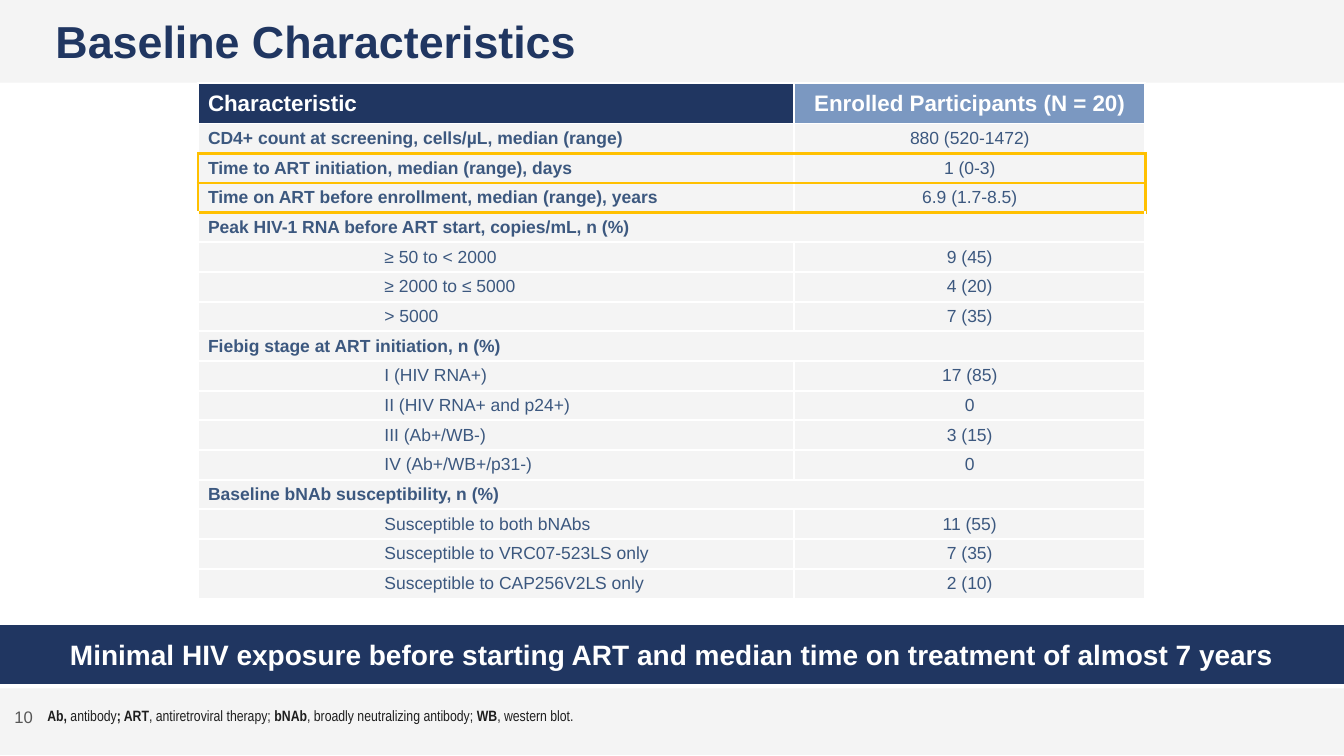
from lxml.etree import SubElement
from pptx import Presentation
from pptx.dml.color import RGBColor
from pptx.enum.shapes import MSO_SHAPE as Preset
from pptx.enum.text import MSO_ANCHOR as Anchor, MSO_AUTO_SIZE as AutoSize, PP_ALIGN as Align
from pptx.oxml.ns import qn
from pptx.util import Pt

COLORS = {
    "navy": "203661", "steel": "7B98C1", "slate": "3C587F", "light": "F4F4F4",
    "white": "FFFFFF", "gold": "FFC000", "ink": "1E1E1E", "gray": "565656",
}
ROWS = [
    ("CD4+ count at screening, cells/µL, median (range)", "880 (520-1472)", "main"),
    ("Time to ART initiation, median (range), days", "1 (0-3)", "key"),
    ("Time on ART before enrollment, median (range), years", "6.9 (1.7-8.5)", "key"),
    ("Peak HIV-1 RNA before ART start, copies/mL, n (%)", "", "group"),
    ("≥ 50 to < 2000", "9 (45)", "detail"),
    ("≥ 2000 to ≤ 5000", "4 (20)", "detail"),
    ("> 5000", "7 (35)", "detail"),
    ("Fiebig stage at ART initiation, n (%)", "", "group"),
    ("I (HIV RNA+)", "17 (85)", "detail"),
    ("II (HIV RNA+ and p24+)", "0", "detail"),
    ("III (Ab+/WB-)", "3 (15)", "detail"),
    ("IV (Ab+/WB+/p31-)", "0", "detail"),
    ("Baseline bNAb susceptibility, n (%)", "", "group"),
    ("Susceptible to both bNAbs", "11 (55)", "detail"),
    ("Susceptible to VRC07-523LS only", "7 (35)", "detail"),
    ("Susceptible to CAP256V2LS only", "2 (10)", "detail"),
]
ABBREVIATIONS = [
    ("Ab, ", True), ("antibody", False), ("; ART", True),
    (", antiretroviral therapy; ", False), ("bNAb", True),
    (", broadly neutralizing antibody; ", False), ("WB", True),
    (", western blot.", False),
]


def color(name):
    return RGBColor.from_string(COLORS[name])


class SlideBuilder:
    """Holds the style and the current slide, and adds each kind of element."""

    def __init__(self, slide, font="Arial"):
        self.slide = slide
        self.font = font

    def add_runs(self, paragraph, runs, size, ink, align=Align.LEFT, font=None):
        paragraph.alignment = align
        for text, bold in runs:
            run = paragraph.add_run()
            run.text = text
            run.font.name = font or self.font
            run.font.size = Pt(size)
            run.font.bold = bold
            run.font.color.rgb = color(ink)

    def frame(self, shape, margins):
        frame = shape.text_frame
        frame.word_wrap = True
        frame.auto_size = AutoSize.NONE
        frame.vertical_anchor = Anchor.MIDDLE
        side, edge = margins
        frame.margin_left = frame.margin_right = Pt(side)
        frame.margin_top = frame.margin_bottom = Pt(edge)
        return frame.paragraphs[0]

    def title(self, text, box):
        title = self.slide.shapes.title
        title.left, title.top, title.width, title.height = map(Pt, box)
        title.fill.solid()
        title.fill.fore_color.rgb = color("light")
        paragraph = self.frame(title, (7.2, 0))
        paragraph._p.get_or_add_pPr().set("marL", str(Pt(32.4)))
        self.add_runs(paragraph, [(text, True)], 32, "navy")

    def band(self, box, fill, text=None, line=None):
        band = self.slide.shapes.add_shape(Preset.RECTANGLE, *map(Pt, box))
        band.shadow.inherit = False
        band.fill.solid()
        band.fill.fore_color.rgb = color(fill)
        if line:
            band.line.color.rgb = color(fill)
            band.line.width = Pt(line)
        else:
            band.line.fill.background()
        if text:
            paragraph = self.frame(band, (7.2, 3.6))
            self.add_runs(paragraph, [(text, True)], 20, "white", Align.CENTER)

    def text(self, box, runs, size, ink, align=Align.LEFT, font=None, spacing=1.0):
        paragraph = self.frame(self.slide.shapes.add_textbox(*map(Pt, box)), (0, 0))
        paragraph.line_spacing = spacing
        self.add_runs(paragraph, runs, size, ink, align, font)

    def cell(self, cell, text, fill, size, ink, bold, align, gold_edges="", indent=0):
        properties = cell._tc.get_or_add_tcPr()
        for edge in "LRTB":
            is_gold = edge in gold_edges
            line = SubElement(properties, qn(f"a:ln{edge}"), w=str(Pt(2.25 if is_gold else 1.5)))
            solid = SubElement(line, qn("a:solidFill"))
            SubElement(solid, qn("a:srgbClr"), val=COLORS["gold" if is_gold else "white"])
        cell.fill.solid()
        cell.fill.fore_color.rgb = color(fill)
        cell.vertical_anchor = Anchor.MIDDLE
        cell.margin_top = cell.margin_bottom = Pt(0)
        paragraph = cell.text_frame.paragraphs[0]
        paragraph._p.get_or_add_pPr().set("marL", str(Pt(indent)))
        self.add_runs(paragraph, [(text, bold)] if text else [], size, ink, align)

    def table(self, left, top, widths, header, rows, header_height, row_height):
        height = header_height + row_height * len(rows)
        box = map(Pt, (left, top, sum(widths), height))
        table = self.slide.shapes.add_table(len(rows) + 1, len(widths), *box).table
        table.horz_banding = False
        for column, width in zip(table.columns, widths):
            column.width = Pt(width)
        for index, row in enumerate(table.rows):
            row.height = Pt(row_height if index else header_height)
        aligns = (Align.LEFT, Align.CENTER)
        for column, (text, fill) in enumerate(header):
            self.cell(table.cell(0, column), text, fill, 16, "white", True, aligns[column])
        kinds = ["header"] + [kind for *_, kind in rows] + ["end"]
        for index, (label, value, kind) in enumerate(rows, 1):
            edges = "T" if "key" in kinds[index - 1:index + 1] else ""
            edges += "B" if "key" in kinds[index:index + 2] else ""
            for column, text in enumerate((label, value)):
                side = "LR"[column] if kind == "key" else ""
                indent = 126 if kind == "detail" and column == 0 else 0
                bold = column == 0 and kind != "detail"
                self.cell(table.cell(index, column), text, "light", 12.5, "slate",
                          bold, aligns[column], edges + side, indent)
            if kind == "group":
                table.cell(index, 0).merge(table.cell(index, 1))


def main():
    presentation = Presentation()
    presentation.slide_width, presentation.slide_height = Pt(960), Pt(540)
    slide = presentation.slides.add_slide(presentation.slide_layouts[5])
    builder = SlideBuilder(slide)
    builder.band((0, 491.8, 960, 47.5), "light")
    builder.text((33.8, 500.4, 887, 23), ABBREVIATIONS, 10.7, "ink",
                 font="Arial Narrow", spacing=0.85)
    builder.text((0, 495.4, 33.8, 33.8), [("10", False)], 11.9, "gray", Align.CENTER)
    builder.title("Baseline Characteristics", (0, -0.7, 960, 59.8))
    header = [("Characteristic", "navy"), ("Enrolled Participants (N = 20)", "steel")]
    builder.table(141.4, 59.4, (426, 250.6), header, ROWS, 28.8, 21.22)
    builder.band((0, 447.1, 960, 40.3), "navy",
                 "Minimal HIV exposure before starting ART and median time on "
                 "treatment of almost 7 years", line=2)
    presentation.save("out.pptx")


if __name__ == "__main__":
    main()
